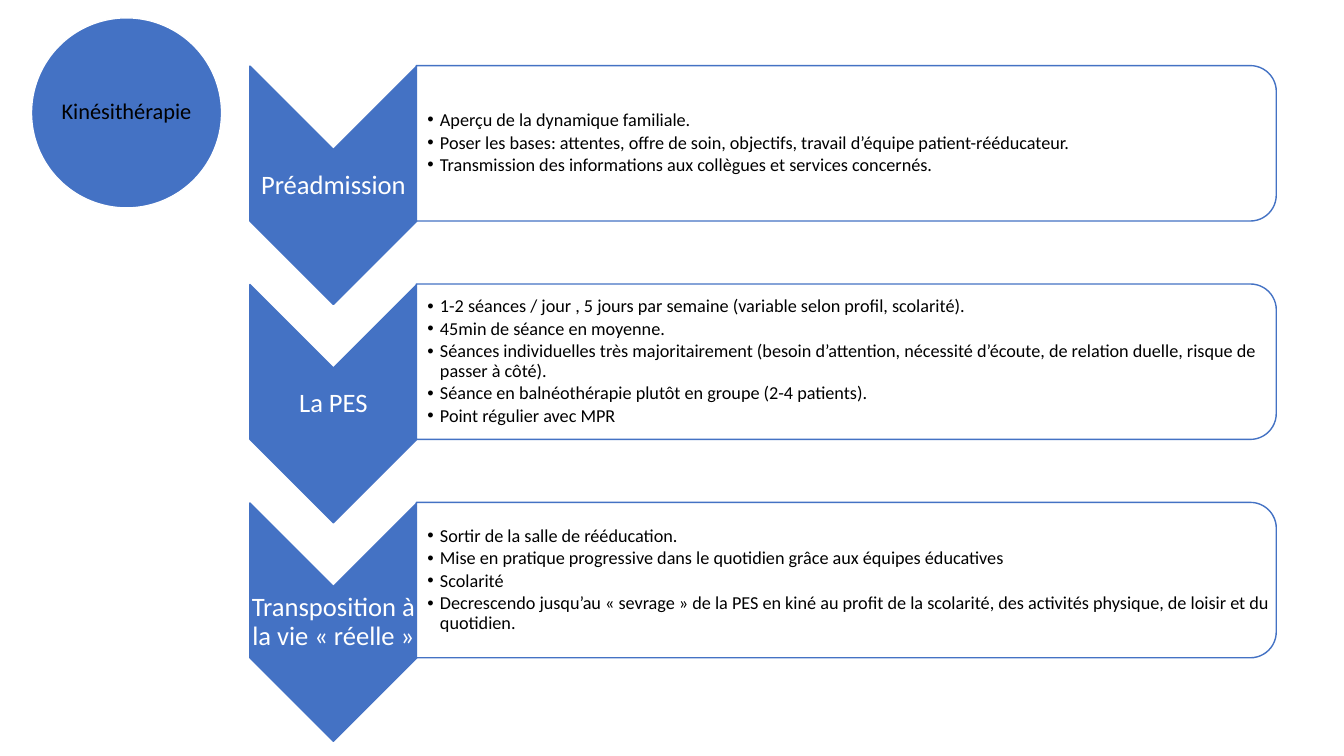
from lxml import etree
from pptx import Presentation
from pptx.dml.color import RGBColor
from pptx.enum.shapes import MSO_SHAPE
from pptx.enum.text import MSO_ANCHOR, MSO_AUTO_SIZE, PP_ALIGN
from pptx.oxml.ns import qn
from pptx.util import Pt

PX = 9525
OVAL = MSO_SHAPE.OVAL
CHEVRON = MSO_SHAPE.CHEVRON
PANEL = MSO_SHAPE.ROUND_2_SAME_RECTANGLE
MIDDLE = MSO_ANCHOR.MIDDLE
NO_AUTOFIT = MSO_AUTO_SIZE.NONE
CENTER = PP_ALIGN.CENTER
LEFT = PP_ALIGN.LEFT

COLORS = {"blue": "4472C4", "white": "FFFFFF", "black": "000000"}
FONT = "Calibri"
COMPARISON_LAYOUT = 4
STEP_PITCH = 208

TITLE = "Kinésithérapie"
STEPS = [
    ("Préadmission", [
        "Aperçu de la dynamique familiale.",
        "Poser les bases: attentes, offre de soin, objectifs, travail d’équipe patient-rééducateur.",
        "Transmission des informations aux collègues et services concernés.",
    ]),
    ("La PES", [
        "1-2 séances / jour , 5 jours par semaine (variable selon profil, scolarité).",
        "45min de séance en moyenne.",
        "Séances individuelles très majoritairement (besoin d’attention, nécessité d’écoute, "
        "de relation duelle, risque de passer à côté).",
        "Séance en balnéothérapie plutôt en groupe (2-4 patients).",
        "Point régulier avec MPR",
    ]),
    ("Transposition à la vie « réelle »", [
        "Sortir de la salle de rééducation.",
        "Mise en pratique progressive dans le quotidien grâce aux équipes éducatives",
        "Scolarité",
        "Decrescendo jusqu’au « sevrage » de la PES en kiné au profit de la scolarité, "
        "des activités physique, de loisir et du quotidien.",
    ]),
]


class SlideBuilder:
    def __init__(self, slide):
        self.slide = slide

    def color(self, name):
        return RGBColor.from_string(COLORS[name])

    def box(self, left, top, width, height):
        return [length * PX for length in (left, top, width, height)]

    def shape(self, kind, area, fill, line, rotation=0):
        shape = self.slide.shapes.add_shape(kind, *self.box(*area))
        shape.rotation = rotation
        shape.shadow.inherit = False
        shape.fill.solid()
        shape.fill.fore_color.rgb = self.color(fill)
        shape.line.color.rgb = self.color(line)
        shape.line.width = Pt(1)

    def frame(self, shape, left_inset, inset):
        frame = shape.text_frame
        frame.word_wrap = True
        frame.auto_size = NO_AUTOFIT
        frame.vertical_anchor = MIDDLE
        frame.margin_left = left_inset * PX
        frame.margin_top = frame.margin_right = frame.margin_bottom = inset * PX
        return frame

    def add_text(self, paragraph, text, size, color, alignment):
        paragraph.alignment = alignment
        paragraph.line_spacing = 0.9
        paragraph.space_before = Pt(0)
        run = paragraph.add_run()
        run.text = text
        run.font.name = FONT
        run.font.size = Pt(size)
        run.font.bold = False
        run.font.color.rgb = self.color(color)

    def place(self, placeholder, area):
        placeholder.left, placeholder.top, placeholder.width, placeholder.height = self.box(*area)
        placeholder.element.getparent().append(placeholder.element)

    def title(self, text, area):
        title = self.slide.shapes.title
        self.place(title, area)
        paragraph = self.frame(title, 2, 2).paragraphs[0]
        self.add_text(paragraph, text, 16, "black", CENTER)

    def label(self, text, area):
        label = self.slide.shapes.add_textbox(*self.box(*area))
        paragraph = self.frame(label, 1, 1).paragraphs[0]
        self.add_text(paragraph, text, 19, "white", CENTER)

    def bullets(self, placeholder, items, area):
        self.place(placeholder, area)
        frame = self.frame(placeholder, 10, 1)
        for index, item in enumerate(items):
            paragraph = frame.add_paragraph() if index else frame.paragraphs[0]
            paragraph.level = 1
            self.add_text(paragraph, item, 13, "black", LEFT)
            paragraph.space_after = Pt(2)
            properties = paragraph._p.get_or_add_pPr()
            properties.set("marL", str(12 * PX))
            properties.set("indent", str(-12 * PX))
            etree.SubElement(properties, qn("a:buChar")).set("char", "•")


def main():
    presentation = Presentation()
    presentation.slide_width = 1280 * PX
    presentation.slide_height = 720 * PX
    slide = presentation.slides.add_slide(presentation.slide_layouts[COMPARISON_LAYOUT])
    bodies = list(slide.placeholders)[1:]
    builder = SlideBuilder(slide)

    builder.shape(OVAL, (30, 17, 181, 181), "blue", "white")
    builder.title(TITLE, (56, 43, 129, 128))

    for index, (name, items) in enumerate(STEPS):
        offset = index * STEP_PITCH
        builder.shape(CHEVRON, (204, 97 + offset, 227, 159), "blue", "blue", 90)
        builder.label(name, (238, 143 + offset, 159, 68))
        builder.shape(PANEL, (732, -273 + offset, 148, 819), "white", "blue", 90)
        builder.bullets(bodies[index], items, (397, 70 + offset, 812, 133))

    for unused in bodies[len(STEPS):]:
        unused.element.getparent().remove(unused.element)

    presentation.save("out.pptx")


if __name__ == "__main__":
    main()
